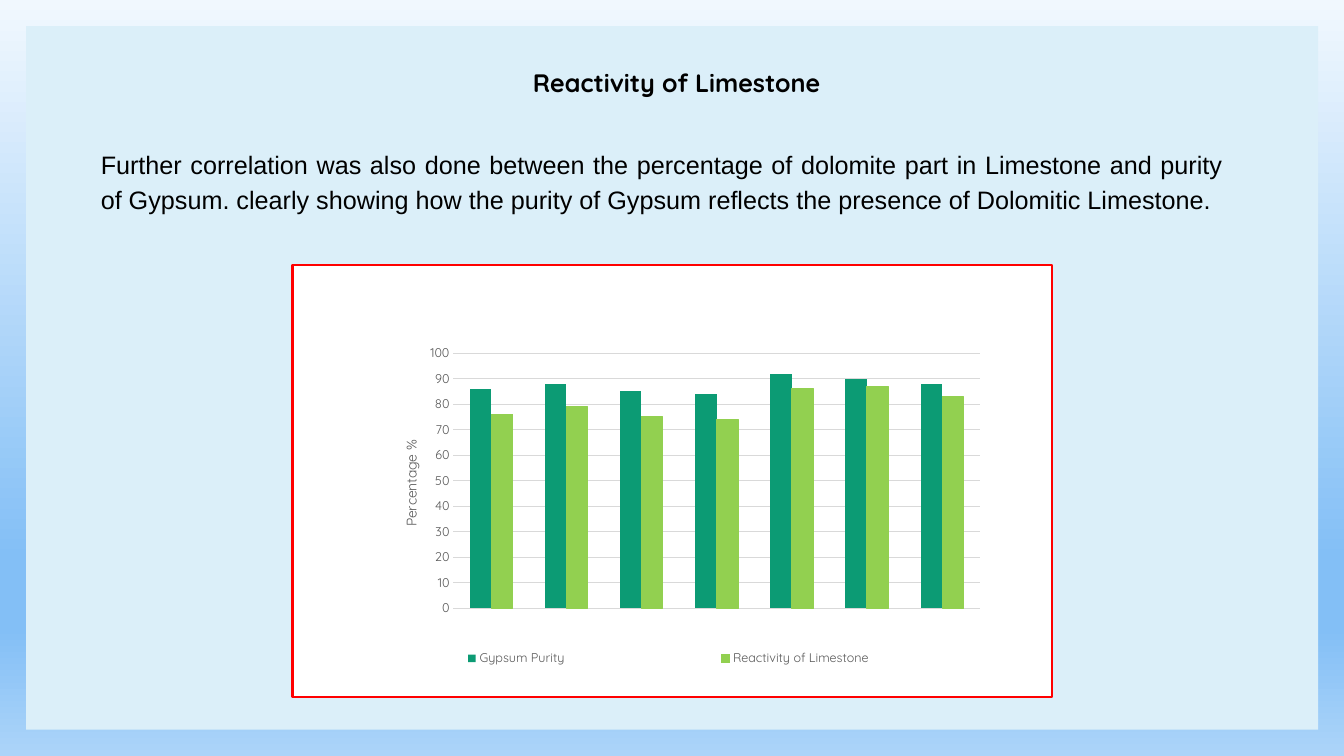
from dataclasses import dataclass

from lxml import etree
from copy import deepcopy
from pptx import Presentation
from pptx.chart.data import CategoryChartData
from pptx.dml.color import RGBColor
from pptx.enum.chart import XL_CHART_TYPE, XL_LEGEND_POSITION, XL_TICK_MARK
from pptx.enum.shapes import MSO_SHAPE
from pptx.enum.text import PP_ALIGN
from pptx.oxml import parse_xml
from pptx.oxml.ns import nsdecls, qn
from pptx.util import Cm, Pt

COLUMNS = XL_CHART_TYPE.COLUMN_CLUSTERED
LEGEND_BOTTOM = XL_LEGEND_POSITION.BOTTOM
NO_TICK = XL_TICK_MARK.NONE
RECTANGLE = MSO_SHAPE.RECTANGLE
CENTER, JUSTIFY = PP_ALIGN.CENTER, PP_ALIGN.JUSTIFY


@dataclass(frozen=True)
class Theme:
    sky: tuple = ((0, "F1F8FE"), (0.74, "83BFF6"), (0.83, "83BFF6"), (1, "ACD4F9"))
    panel: str = "DBEFF9"
    ink: str = "000000"
    muted: str = "595959"
    grid: str = "D9D9D9"
    card: str = "FFFFFF"
    border: str = "FF0000"
    gypsum: str = "0C9B74"
    limestone: str = "92D050"
    heading_font: str = "Quicksand"
    body_font: str = "Arial"
    text_size: int = 18
    axis_title_size: int = 10
    label_size: int = 9


THEME = Theme()
HEADING = "Reactivity of Limestone"
FINDING = (
    "Further correlation was also done between the percentage of dolomite part in "
    "Limestone and purity of Gypsum. clearly showing how the purity of Gypsum "
    "reflects the presence of Dolomitic Limestone."
)
SERIES = (
    ("Gypsum Purity", (86, 88, 85, 84, 92, 90, 88), THEME.gypsum),
    ("Reactivity of Limestone", (76, 79, 75, 74, 86, 87, 83), THEME.limestone),
)


def rgb(value):
    return RGBColor.from_string(value)


def apply(target, **values):
    for name, value in values.items():
        setattr(target, name, value)


def style_font(font, size, color, name=THEME.heading_font, bold=False):
    apply(font, size=Pt(size), name=name, bold=bold)
    font.color.rgb = rgb(color)


def paint_sky(page):
    fill = page.background.fill
    fill.gradient()
    fill.gradient_angle = 270
    stop_list = next(page.element.iter(qn("a:gsLst")))
    for _ in THEME.sky[2:]:
        stop_list.append(deepcopy(stop_list[0]))
    for stop, (position, color) in zip(fill.gradient_stops, THEME.sky):
        stop.position = position
        stop.color.rgb = rgb(color)


def add_panel(page, box):
    panel = page.shapes.add_shape(RECTANGLE, *box)
    panel.shadow.inherit = False
    panel.fill.solid()
    panel.fill.fore_color.rgb = rgb(THEME.panel)
    panel.line.fill.background()


def add_text(page, box, text, font_name, bold=False, indent=Cm(0.25), **paragraph):
    frame = page.shapes.add_textbox(*box).text_frame
    apply(frame, word_wrap=True, margin_left=indent)
    para = frame.paragraphs[0]
    apply(para, line_spacing=1.15, **paragraph)
    span = para.add_run()
    span.text = text
    style_font(span.font, THEME.text_size, THEME.ink, font_name, bold)


def set_layout(element, index, **places):
    """Fix a chart part at fractions of the chart area."""
    for old in element.findall(qn("c:layout")):
        element.remove(old)
    layout = parse_xml(f"<c:layout {nsdecls('c')}><c:manualLayout/></c:layout>")
    for tag, value in places.items():
        etree.SubElement(layout[0], qn(f"c:{tag}"), val=str(value))
    element.insert(index, layout)


def frame_chart(chart):
    """Give the chart area its white fill and red border."""
    area = parse_xml(
        f"<c:spPr {nsdecls('c', 'a')}>"
        f'<a:solidFill><a:srgbClr val="{THEME.card}"/></a:solidFill>'
        f'<a:ln w="{Pt(1.75)}"><a:solidFill><a:srgbClr val="{THEME.border}"/>'
        "</a:solidFill></a:ln></c:spPr>"
    )
    chart.element.find(qn("c:chart")).addnext(area)


def style_value_axis(axis):
    apply(axis, minimum_scale=0, maximum_scale=100, major_unit=10,
          major_tick_mark=NO_TICK, minor_tick_mark=NO_TICK)
    axis.format.line.fill.background()
    grid = axis.major_gridlines.format.line
    grid.color.rgb = rgb(THEME.grid)
    grid.width = Pt(0.75)
    style_font(axis.tick_labels.font, THEME.label_size, THEME.muted)
    title = axis.axis_title
    span = title.text_frame.paragraphs[0].add_run()
    span.text = "Percentage %"
    style_font(span.font, THEME.axis_title_size, THEME.muted)
    set_layout(title.element if hasattr(title, "element") else title._element, 1,
               xMode="edge", yMode="edge", x=0.14, y=0.4)


def add_purity_chart(page, box):
    data = CategoryChartData()
    data.categories = [str(number) for number in range(1, 8)]
    for name, values, _ in SERIES:
        data.add_series(name, values)
    chart = page.shapes.add_chart(COLUMNS, *box, data).chart
    apply(chart, has_title=False, has_legend=True)
    style_font(chart.font, THEME.axis_title_size, THEME.ink)
    frame_chart(chart)
    chart.category_axis.visible = False
    style_value_axis(chart.value_axis)

    plot = chart.plots[0]
    apply(plot, gap_width=150, overlap=0, vary_by_categories=False)
    for series, (_, _, color) in zip(plot.series, SERIES):
        series.format.fill.solid()
        series.format.fill.fore_color.rgb = rgb(color)
    limestone_line = plot.series[1].format.line
    limestone_line.color.rgb = rgb(THEME.limestone)
    limestone_line.width = Pt(0.75)

    apply(chart.legend, position=LEGEND_BOTTOM, include_in_layout=False)
    style_font(chart.legend.font, THEME.label_size, THEME.muted)
    root = chart.element
    set_layout(next(root.iter(qn("c:plotArea"))), 0, layoutTarget="inner",
               xMode="edge", yMode="edge", x=0.212, y=0.204, w=0.693, h=0.59)
    set_layout(next(root.iter(qn("c:legend"))), 1,
               xMode="edge", yMode="edge", x=0.03, y=0.86, w=0.93, h=0.1)


def build_slide(page, box):
    """Place heading, finding and chart relative to the panel box."""
    left, top, _, _ = box

    def inside(x, y, width, height):
        return left + Cm(x), top + Cm(y), Cm(width), Cm(height)

    paint_sky(page)
    add_panel(page, box)
    add_text(page, inside(1.63, 2.87, 28.78, 2.84), FINDING, THEME.body_font,
             alignment=JUSTIFY)
    add_purity_chart(page, inside(6.68, 5.99, 19.2, 10.95))
    add_text(page, inside(7.29, 0.79, 16.94, 1.09), HEADING, THEME.heading_font,
             bold=True, indent=Cm(1.52), alignment=CENTER, space_after=Pt(6))


def main():
    deck = Presentation()
    apply(deck, slide_width=Cm(33.87), slide_height=Cm(19.05))
    page = deck.slides.add_slide(deck.slide_layouts[6])
    build_slide(page, (Cm(0.66), Cm(0.66), Cm(32.56), Cm(17.73)))
    deck.save("out.pptx")


if __name__ == "__main__":
    main()
